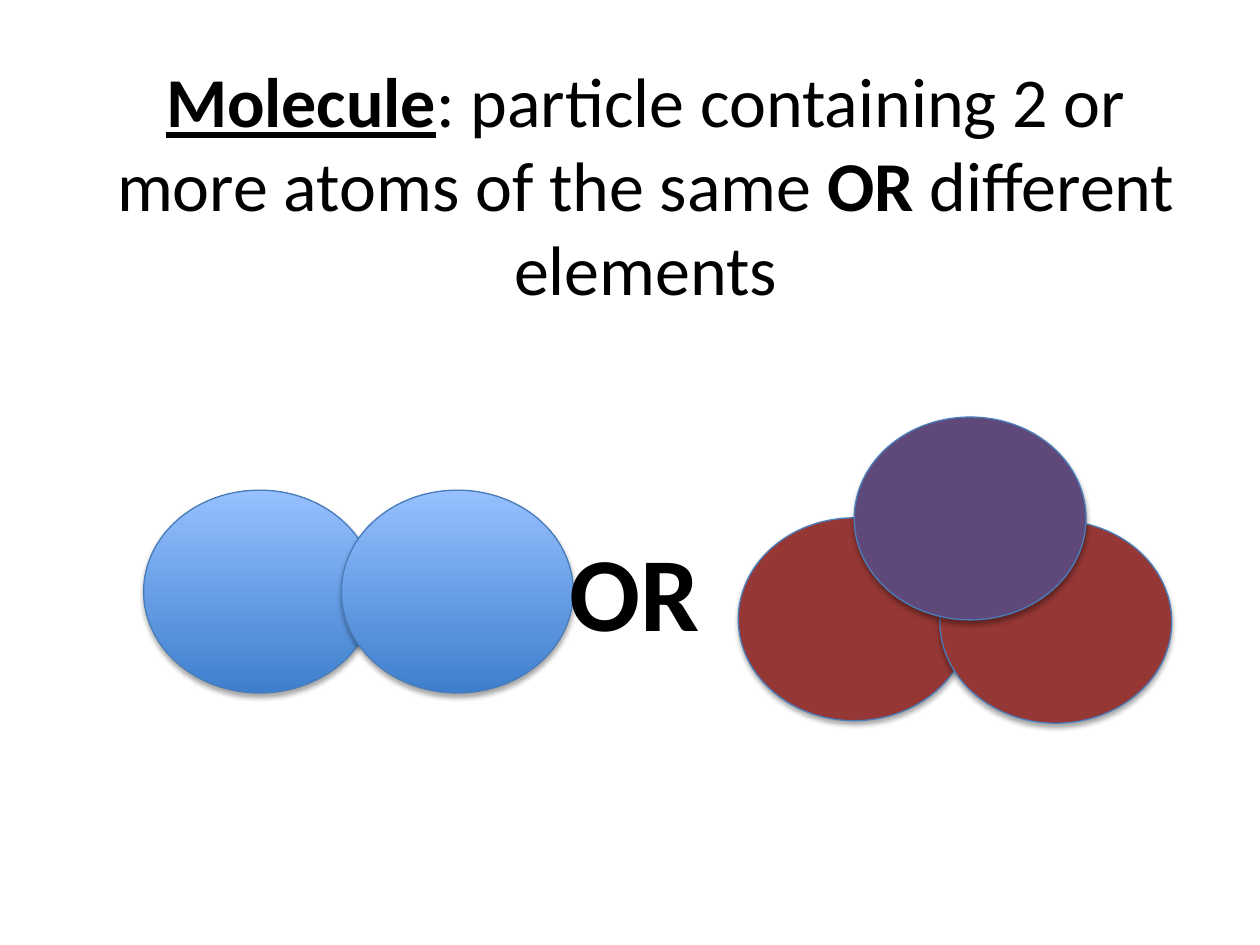
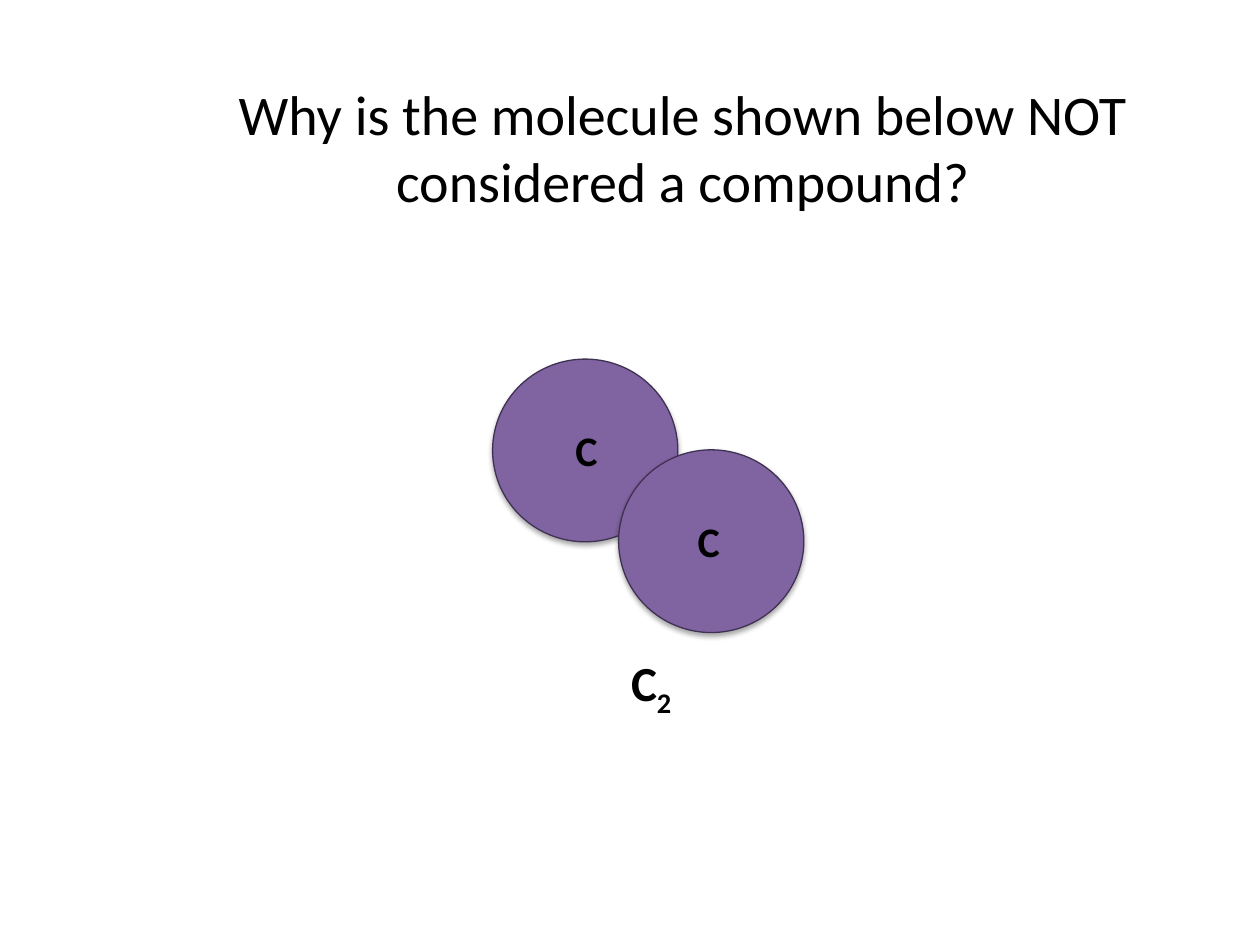
from lxml.etree import SubElement
from pptx import Presentation
from pptx.dml.color import RGBColor
from pptx.enum.shapes import MSO_SHAPE as SHAPE
from pptx.enum.text import MSO_ANCHOR as ANCHOR, MSO_AUTO_SIZE as AUTO_SIZE, PP_ALIGN as ALIGN
from pptx.oxml.ns import qn
from pptx.util import Pt

PX = 9144  # EMU in one px, at 100 px to the inch
FONT = "Calibri"
BLACK = "000000"
BLUE_BOTTOM, BLUE_TOP, BLUE_LINE = "3E7FCD", "96C0FF", "4A7DBA"
RED, DARK_PURPLE = "953734", "5F497A"
PURPLE, PURPLE_LINE = "8064A2", "3F3151"


def rgb(color):
    return RGBColor.from_string(color)


def emu(*lengths):
    return [length * PX for length in lengths]


def add_soft_shadow(shape):
    """Replace the theme shadow by a faint one that falls straight down."""
    shape.shadow.inherit = False
    effects = shape._element.spPr.find(qn("a:effectLst"))
    shadow = SubElement(effects, qn("a:outerShdw"), blurRad=str(Pt(3.1)),
                        dist=str(Pt(1.8)), dir="5400000", rotWithShape="0")
    color = SubElement(shadow, qn("a:srgbClr"), val=BLACK)
    SubElement(color, qn("a:alpha"), val="35000")


def add_atom(shapes, box, fills, line):
    """Draw an atom; two fills make a gradient from bottom to top."""
    atom = shapes.add_shape(SHAPE.OVAL, *emu(*box))
    if len(fills) == 1:
        atom.fill.solid()
        atom.fill.fore_color.rgb = rgb(fills[0])
    else:
        atom.fill.gradient()
        atom.fill.gradient_angle = 90
        for position, (stop, color) in enumerate(zip(atom.fill.gradient_stops, fills)):
            stop.position = position
            stop.color.rgb = rgb(color)
    atom.line.color.rgb = rgb(line)
    atom.line.width = Pt(0.75)
    add_soft_shadow(atom)


def add_text(shapes, box, runs, size, align=ALIGN.CENTER, anchor=ANCHOR.TOP, grow=False):
    """Write one paragraph; each run is its text and a string of the styles b, u and sub."""
    text_box = shapes.add_textbox(*emu(*box))
    frame = text_box.text_frame
    frame.word_wrap = True
    frame.auto_size = AUTO_SIZE.SHAPE_TO_FIT_TEXT if grow else AUTO_SIZE.NONE
    frame.vertical_anchor = anchor
    paragraph = frame.paragraphs[0]
    paragraph.alignment = align
    for text, style in runs:
        styles = style.split()
        run = paragraph.add_run()
        run.text = text
        run.font.name = FONT
        run.font.size = Pt(size)
        run.font.color.rgb = rgb(BLACK)
        run.font.bold = "b" in styles
        run.font.underline = "u" in styles
        if "sub" in styles:
            run._r.get_or_add_rPr().set("baseline", "-25000")


def add_blue_molecule(slide, left, top):
    group = slide.shapes.add_group_shape()
    for index in range(2):
        add_atom(group.shapes, (left + 157 * index, top, 184, 161),
                 (BLUE_BOTTOM, BLUE_TOP), BLUE_LINE)


def add_mixed_molecule(slide, left, top):
    for x, y, color in ((0, 80, RED), (160, 82, RED), (92, 0, DARK_PURPLE)):
        add_atom(slide.shapes, (left + x, top + y, 184, 161), (color,), BLUE_LINE)


def add_carbon_molecule(slide, left, top):
    shapes = slide.shapes.add_group_shape().shapes
    for index in range(2):
        add_atom(shapes, (left + 100 * index, top + 72 * index, 147, 145),
                 (PURPLE,), PURPLE_LINE)
    for index in range(2):
        add_text(shapes, (left + 49 + 97 * index, top + 47 + 72 * index, 51, 50),
                 [("C", "b")], 24, grow=True)


def build_definition_slide(slide):
    add_text(slide.shapes, (62, 41, 901, 210),
             [("Molecule", "b u"),
              (": particle containing 2 or more atoms of the same ", ""),
              ("OR", "b"),
              (" different elements", "")], 40, anchor=ANCHOR.MIDDLE)
    add_blue_molecule(slide, 114, 389)
    add_mixed_molecule(slide, 586, 331)
    add_text(slide.shapes, (428, 413, 170, 111), [("OR ", "b")], 60)


def build_question_slide(slide):
    add_carbon_molecule(slide, 391, 285)
    add_text(slide.shapes, (491, 513, 55, 57), [("C", "b"), ("2", "b sub")], 28,
             align=ALIGN.LEFT, grow=True)
    add_text(slide.shapes, (119, 58, 846, 118),
             [("Why is the molecule shown below NOT considered a compound?", "")], 32, grow=True)


def main():
    presentation = Presentation()
    presentation.slide_width, presentation.slide_height = emu(1000, 750)
    blank = presentation.slide_layouts[6]
    for build in (build_definition_slide, build_question_slide):
        build(presentation.slides.add_slide(blank))
    presentation.save("out.pptx")


if __name__ == "__main__":
    main()
